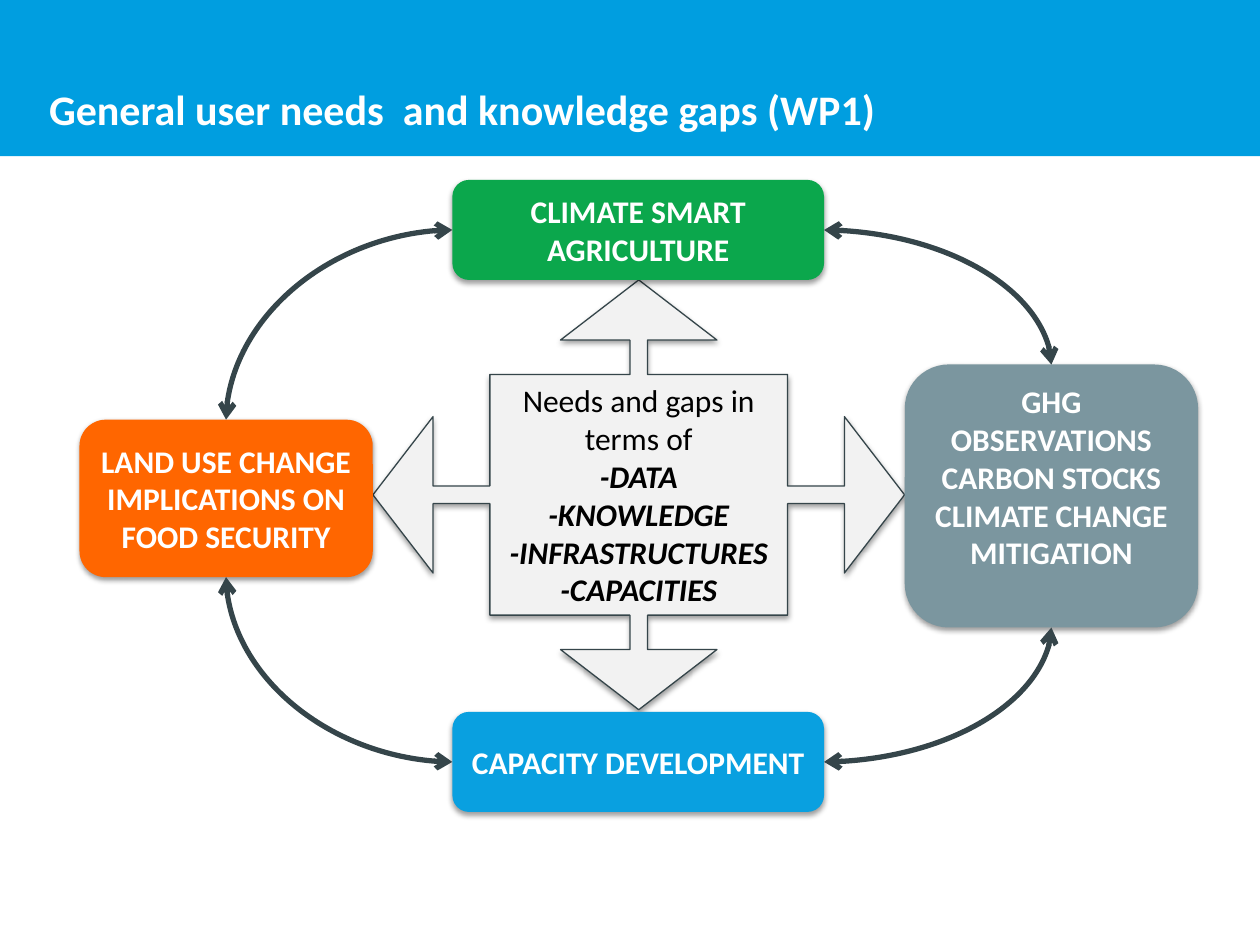
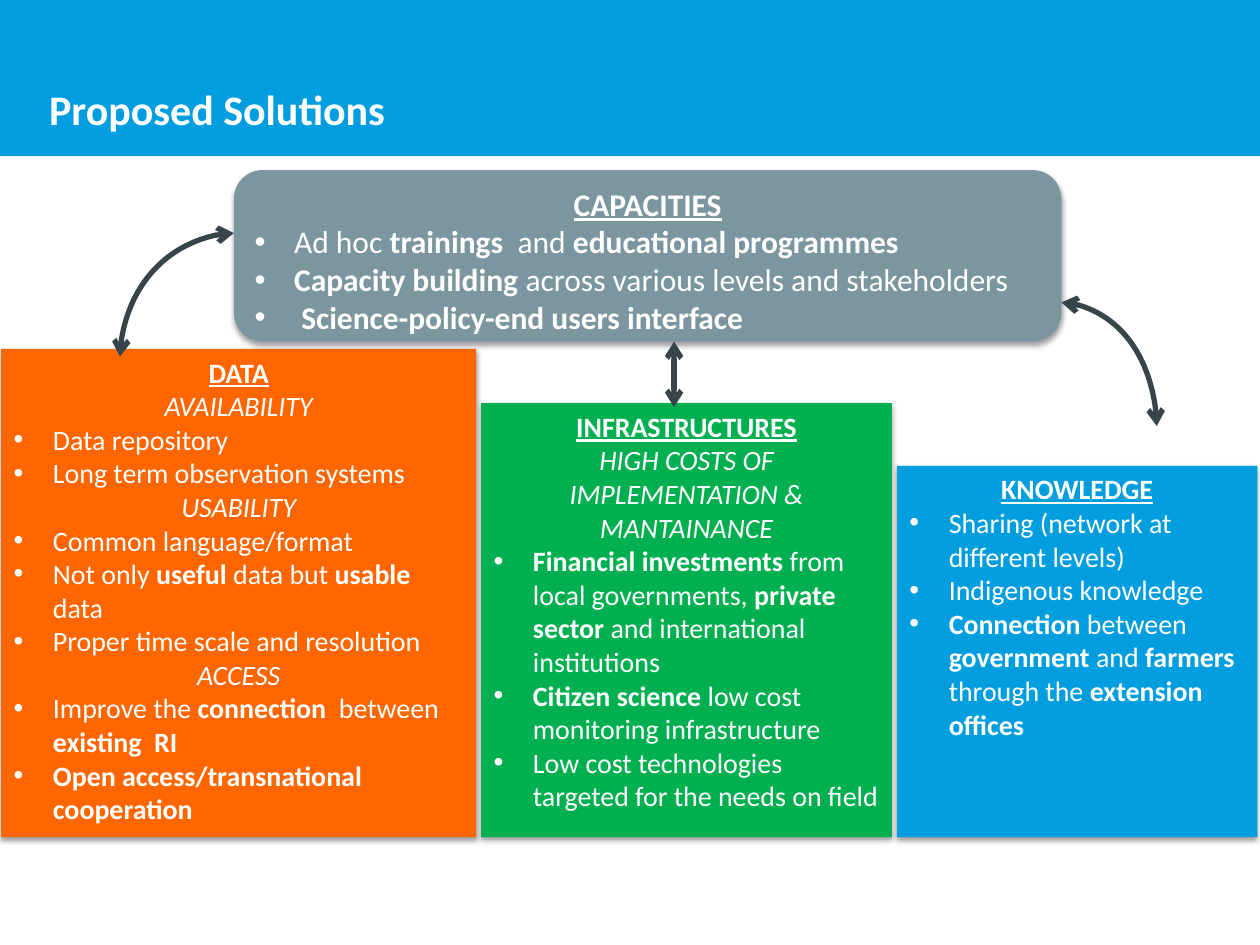
from dataclasses import dataclass

import lxml.etree
import pptx
import pptx.dml.color
import pptx.enum.shapes
import pptx.enum.text
import pptx.oxml.ns
import pptx.util

Pt = pptx.util.Pt
RGB = pptx.dml.color.RGBColor
Kind = pptx.enum.shapes.MSO_SHAPE
Link = pptx.enum.shapes.MSO_CONNECTOR
Align = pptx.enum.text.PP_ALIGN
Anchor = pptx.enum.text.MSO_ANCHOR
qn = pptx.oxml.ns.qn

BAND = RGB(0x00, 0x9E, 0xE0)
SKY = RGB(0x09, 0xA0, 0xE0)
AZURE = RGB(0x00, 0x9D, 0xDF)
GREEN = RGB(0x0B, 0xA7, 0x4C)
LEAF = RGB(0x00, 0xB0, 0x50)
SLATE = RGB(0x7B, 0x96, 0x9F)
ORANGE = RGB(0xFF, 0x66, 0x00)
PALE = RGB(0xF2, 0xF2, 0xF2)
DARK = RGB(0x35, 0x45, 0x4A)
WHITE = RGB(0xFF, 0xFF, 0xFF)
BLACK = RGB(0x00, 0x00, 0x00)

FONT = "Calibri"
HANG = 22.5
GAP = 2.9
FLOOR = 478.4


@dataclass(frozen=True)
class Box:
    left: float
    top: float
    width: float
    height: float
    fill: RGB
    kind: int = Kind.FLOWCHART_ALTERNATE_PROCESS

    @property
    def right(self) -> float:
        return self.left + self.width

    @property
    def bottom(self) -> float:
        return self.top + self.height

    @property
    def center(self) -> float:
        return self.left + self.width / 2

    @property
    def middle(self) -> float:
        return self.top + self.height / 2


@dataclass(frozen=True)
class Line:
    text: str
    style: str = "item"


@dataclass(frozen=True)
class Column:
    top: float
    width: float
    fill: RGB
    lines: tuple[Line, ...]


STYLES = {
    "head": dict(bold=True, under=True, align=Align.CENTER),
    "topic": dict(italic=True, align=Align.CENTER),
    "item": dict(bullet=True),
}


def add_xml(parent, tag: str, **attrs):
    node = lxml.etree.SubElement(parent, qn(tag))
    for key, value in attrs.items():
        node.set(key, str(value))
    return node


def write(frame, text: str, *, size: float = 18, color: RGB = WHITE,
          bold: bool = False, italic: bool = False, under: bool = False,
          align=Align.LEFT, bullet: bool = False, leading=None) -> None:
    """Adds a paragraph; parts between asterisks are bold."""
    para = frame.paragraphs[0]
    if para.runs:
        para = frame.add_paragraph()
    para.alignment = align
    if leading:
        para.line_spacing = Pt(leading)
    if bullet:
        props = para._p.get_or_add_pPr()
        props.set("marL", str(Pt(HANG)))
        props.set("indent", str(-Pt(HANG)))
        add_xml(props, "a:buFont", typeface="Arial")
        add_xml(props, "a:buChar", char="•")
    for index, part in enumerate(text.split("*")):
        if part:
            run = para.add_run()
            run.text = part
            font = run.font
            font.name = FONT
            font.size = Pt(size)
            font.color.rgb = color
            font.bold = bold or index % 2 == 1
            font.italic = italic
            font.underline = under


def add_box(slide, box: Box, anchor=Anchor.MIDDLE):
    shape = slide.shapes.add_shape(
        box.kind, Pt(box.left), Pt(box.top), Pt(box.width), Pt(box.height))
    shape.fill.solid()
    shape.fill.fore_color.rgb = box.fill
    shape.line.fill.background()
    shape.shadow.inherit = False
    shape.text_frame.word_wrap = True
    shape.text_frame.vertical_anchor = anchor
    return shape


def add_shadow(shape) -> None:
    effects = shape.element.spPr.find(qn("a:effectLst"))
    outer = add_xml(effects, "a:outerShdw", blurRad=Pt(3.1), dist=Pt(1.6),
                    dir=5400000, rotWithShape=0)
    color = add_xml(outer, "a:srgbClr", val=BLACK)
    add_xml(color, "a:alpha", val=38000)


def add_card(slide, box: Box, anchor=Anchor.MIDDLE):
    shape = add_box(slide, box, anchor)
    add_shadow(shape)
    return shape


def add_arrow(slide, x1: float, y1: float, x2: float, y2: float,
              curved: bool = True) -> None:
    kind = Link.CURVE if curved else Link.STRAIGHT
    arrow = slide.shapes.add_connector(kind, Pt(x1), Pt(y1), Pt(x2), Pt(y2))
    arrow.line.color.rgb = DARK
    arrow.line.width = Pt(3)
    props = arrow.element.spPr
    if curved:
        props.find(qn("a:prstGeom")).set("prst", "curvedConnector2")
    stroke = props.find(qn("a:ln"))
    for end in ("a:headEnd", "a:tailEnd"):
        add_xml(stroke, end, type="arrow")
    add_xml(props, "a:effectLst")


def add_slide(deck, title: str):
    slide = deck.slides.add_slide(deck.slide_layouts[6])
    add_box(slide, Box(0, 0, 720, 89.2, BAND, Kind.RECTANGLE))
    frame = slide.shapes.add_textbox(
        Pt(28), Pt(0), Pt(663), Pt(76.3)).text_frame
    frame.word_wrap = True
    frame.vertical_anchor = Anchor.BOTTOM
    frame.margin_left = frame.margin_right = Pt(0)
    frame.margin_top = frame.margin_bottom = Pt(0)
    write(frame, title, size=24, bold=True, leading=35)
    return slide


def draw_needs(deck) -> None:
    slide = add_slide(deck, "General user needs  and knowledge gaps (WP1)")
    hub = add_card(slide, Box(213.1, 160, 303.8, 245.6, PALE,
                              Kind.QUAD_ARROW_CALLOUT))
    for index, value in enumerate((0.041, 0.182, 0.14, 0.56)):
        hub.adjustments[index] = value
    hub.line.color.rgb = DARK
    hub.line.width = Pt(0.75)
    write(hub.text_frame, "Needs and gaps in terms of", color=BLACK,
          align=Align.CENTER)
    for need in ("DATA", "KNOWLEDGE", "INFRASTRUCTURES", "CAPACITIES"):
        write(hub.text_frame, f"-{need}", color=BLACK, bold=True,
              italic=True, align=Align.CENTER)

    smart = Box(258.5, 102.8, 212.4, 57.2, GREEN)
    growth = Box(258.5, 406.8, 212.4, 57.2, SKY)
    carbon = Box(517, 208.3, 167.6, 150.3, SLATE)
    land = Box(45.4, 239.8, 167.6, 90, ORANGE)
    cards = (
        (smart, ("CLIMATE SMART AGRICULTURE",), 3.6),
        (growth, ("CAPACITY DEVELOPMENT",), 3.6),
        (carbon, ("GHG OBSERVATIONS",
                  "CARBON STOCKS CLIMATE CHANGE MITIGATION"), 25.6),
        (land, ("LAND USE CHANGE IMPLICATIONS ON FOOD SECURITY",), 3.6),
    )
    for box, texts, margin in cards:
        frame = add_card(slide, box).text_frame
        frame.margin_bottom = Pt(margin)
        for text in texts:
            write(frame, text, bold=True, align=Align.CENTER)

    for box in (smart, growth):
        for x, side in ((box.left, land), (box.right, carbon)):
            y = side.top if box is smart else side.bottom
            add_arrow(slide, x, box.middle, side.center, y)


def fill_lines(shape, lines: tuple[Line, ...], size: float) -> None:
    for line in lines:
        write(shape.text_frame, line.text, size=size, **STYLES[line.style])


COLUMNS = (
    Column(199.4, 271.4, ORANGE, (
        Line("DATA", "head"),
        Line("AVAILABILITY", "topic"),
        Line("Data repository"),
        Line("Long term observation systems"),
        Line("USABILITY", "topic"),
        Line("Common language/format"),
        Line("Not only *useful *data but *usable* data"),
        Line("Proper time scale and resolution"),
        Line("ACCESS", "topic"),
        Line("Improve the *connection * between *existing  RI*"),
        Line("*Open access/transnational cooperation*"),
    )),
    Column(230.4, 234.7, LEAF, (
        Line("INFRASTRUCTURES", "head"),
        Line("HIGH COSTS OF IMPLEMENTATION & MANTAINANCE", "topic"),
        Line("*Financial investments *from local governments, "
             "*private sector *and international institutions"),
        Line("*Citizen science *low cost monitoring infrastructure"),
        Line("Low cost technologies targeted for the needs on field"),
    )),
    Column(266.2, 205.9, AZURE, (
        Line("KNOWLEDGE", "head"),
        Line("Sharing (network at different levels)"),
        Line("Indigenous knowledge"),
        Line("*Connection *between* government *and* farmers *"
             "through the *extension offices*"),
    )),
)

SKILLS = (
    Line("CAPACITIES", "head"),
    Line("Ad hoc *trainings * and *educational programmes*"),
    Line("*Capacity building *across various levels and stakeholders"),
    Line(" *Science-policy-end users interface*"),
)


def draw_plans(deck) -> None:
    slide = add_slide(deck, "Proposed Solutions")
    left = 0.7
    for column in COLUMNS:
        box = Box(left, column.top, column.width, FLOOR - column.top,
                  column.fill, Kind.RECTANGLE)
        fill_lines(add_card(slide, box, Anchor.TOP), column.lines, 16)
        left += column.width + GAP
    skill = Box(133.7, 97.2, 472.8, 98, SLATE)
    fill_lines(add_card(slide, skill, Anchor.TOP), SKILLS, 18)
    add_arrow(slide, skill.left, 133.2, 68.6, 203.8)
    add_arrow(slide, skill.right, 172.8, 661, 243.4)
    add_arrow(slide, 385.2, skill.bottom, 385.2, 232.6, curved=False)


def main() -> None:
    deck = pptx.Presentation()
    deck.slide_width = Pt(720)
    deck.slide_height = Pt(540)
    draw_needs(deck)
    draw_plans(deck)
    deck.save("out.pptx")


if __name__ == "__main__":
    main()
